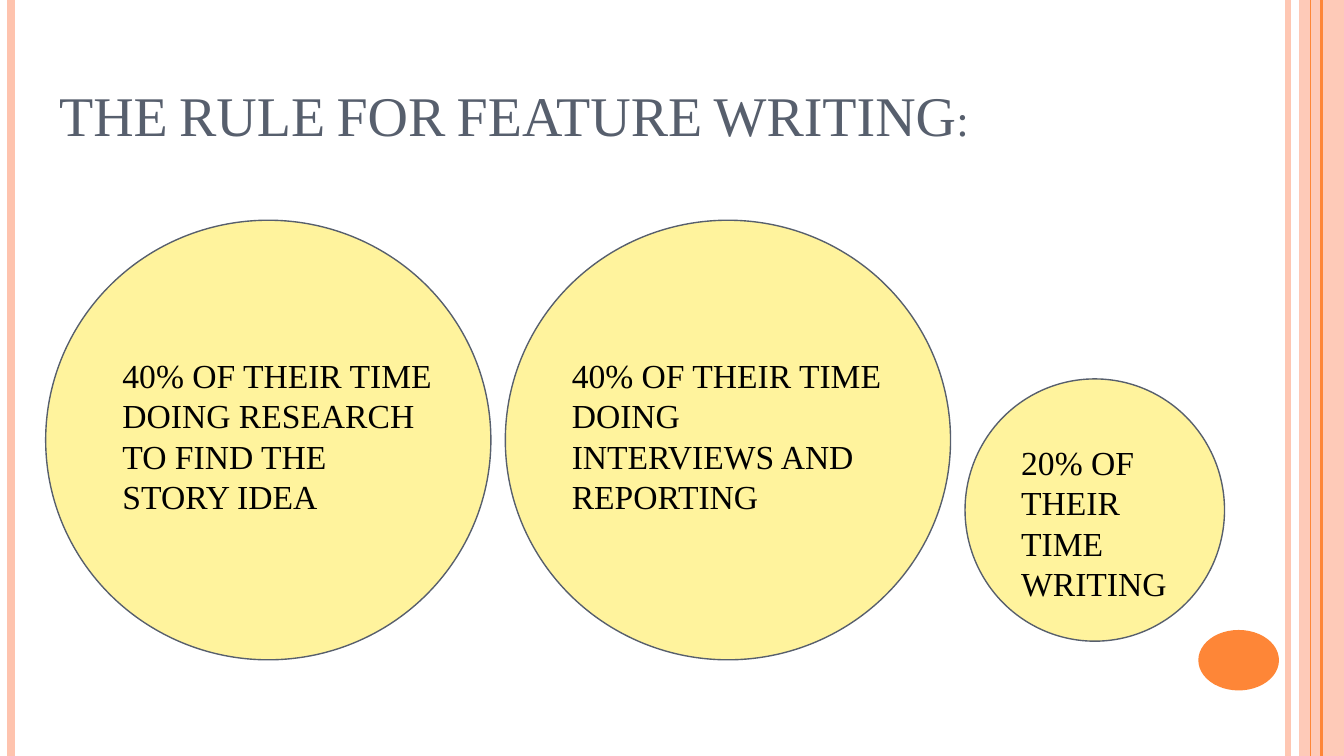
import pptx
import pptx.dml.color
import pptx.enum.shapes
import pptx.enum.text
import pptx.oxml.ns
import pptx.util
from lxml import etree

Pt = pptx.util.Pt
RGBColor = pptx.dml.color.RGBColor
MSO_SHAPE = pptx.enum.shapes.MSO_SHAPE
qn = pptx.oxml.ns.qn

PEACH = RGBColor(0xFE, 0xC3, 0xAE)
ORANGE = RGBColor(0xFE, 0x86, 0x37)
YELLOW = RGBColor(0xFF, 0xF3, 0x9D)
SLATE = RGBColor(0x57, 0x5F, 0x6D)
BLACK = RGBColor(0, 0, 0)
W, H = 720, 405


def set_alpha(fill, percent):
    clr = fill._xPr.find(".//" + qn("a:srgbClr"))
    etree.SubElement(clr, qn("a:alpha")).set("val", str(percent * 1000))


def write_text(sp, text, size, color, pitch):
    tf = sp.text_frame
    frame_format = {
        "word_wrap": True,
        "auto_size": pptx.enum.text.MSO_AUTO_SIZE.NONE,
        "vertical_anchor": pptx.enum.text.MSO_ANCHOR.TOP,
        "margin_left": Pt(7.2), "margin_right": Pt(7.2),
        "margin_top": Pt(7.2), "margin_bottom": Pt(7.2),
    }
    for name, value in frame_format.items():
        setattr(tf, name, value)
    p = tf.paragraphs[0]
    p.alignment = pptx.enum.text.PP_ALIGN.LEFT
    p.line_spacing = Pt(pitch)
    r = p.add_run()
    r.text = text
    for name, value in {"name": "Times New Roman", "size": Pt(size), "bold": False}.items():
        setattr(r.font, name, value)
    r.font.color.rgb = color
    return r


prs = pptx.Presentation()
prs.slide_width, prs.slide_height = Pt(W), Pt(H)
s = prs.slides.add_slide(prs.slide_layouts[5])

title = s.shapes.title
for name, value in {"left": 24.5, "top": 36, "width": 671, "height": 45}.items():
    setattr(title, name, Pt(value))
r = write_text(title, "THE RULE FOR FEATURE WRITING:", 30, SLATE, 36)
r.font._element.set("cap", "small")

band = s.shapes.add_shape(MSO_SHAPE.RECTANGLE, Pt(696), 0, Pt(24), Pt(H))
dot = s.shapes.add_shape(MSO_SHAPE.OVAL, Pt(642), Pt(337.5), Pt(43.2), Pt(32.4))
for sp, color in [(band, PEACH), (dot, ORANGE)]:
    sp.shadow.inherit = False
    sp.fill.solid()
    sp.fill.fore_color.rgb = color
    sp.line.fill.background()
set_alpha(band.fill, 87)

for x, color, width, alpha in [
    (690, PEACH, 3, 93),
    (6, PEACH, 4.5, 100),
    (708, ORANGE, 1.5, 100),
    (702, ORANGE, 0.75, 100),
]:
    line = s.shapes.add_connector(
        pptx.enum.shapes.MSO_CONNECTOR.STRAIGHT, Pt(x), 0, Pt(x), Pt(H))
    line.line.width = Pt(width)
    line.line.color.rgb = color
    if alpha < 100:
        set_alpha(line.line.fill, alpha)
    etree.SubElement(line._element.spPr, qn("a:effectLst"))

for circle, box, text in [
    ((24.5, 118, 238.5, 235.5), (58.5, 183, 181.5, 114.5),
     "40% OF THEIR TIME DOING RESEARCH TO FIND THE STORY IDEA"),
    ((270.75, 118, 238.5, 235.5), (299.25, 183, 181.5, 114.5),
     "40% OF THEIR TIME DOING INTERVIEWS AND REPORTING"),
    ((517, 203, 139, 140.5), (540, 229.5, 98.5, 114.5),
     "20% OF THEIR TIME WRITING"),
]:
    sp = s.shapes.add_shape(MSO_SHAPE.OVAL, *[Pt(v) for v in circle])
    sp.shadow.inherit = False
    sp.fill.solid()
    sp.fill.fore_color.rgb = YELLOW
    sp.line.color.rgb = SLATE
    sp.line.width = Pt(0.75)
    write_text(s.shapes.add_textbox(*[Pt(v) for v in box]), text, 18, BLACK, 21.6)

prs.save("out.pptx")
